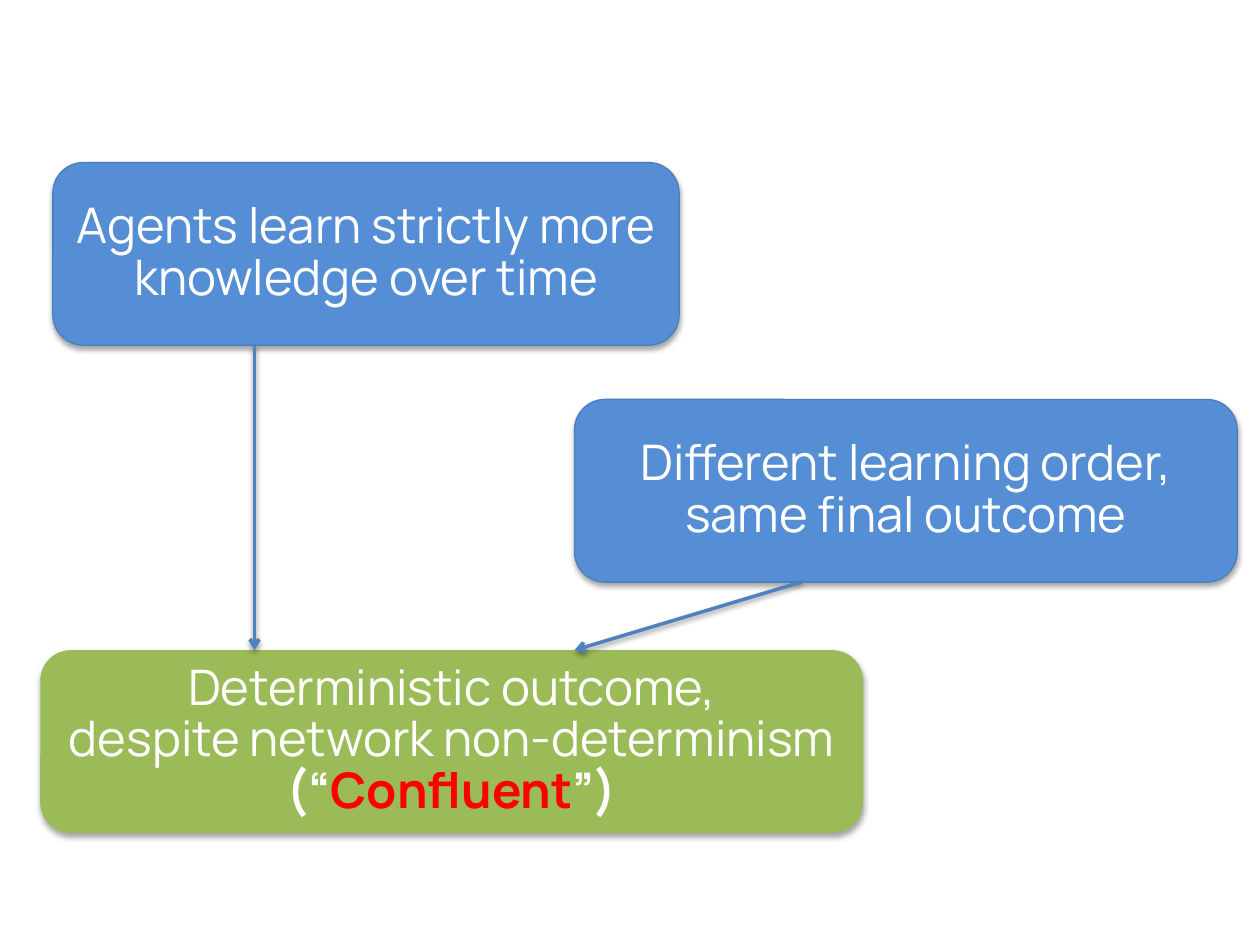
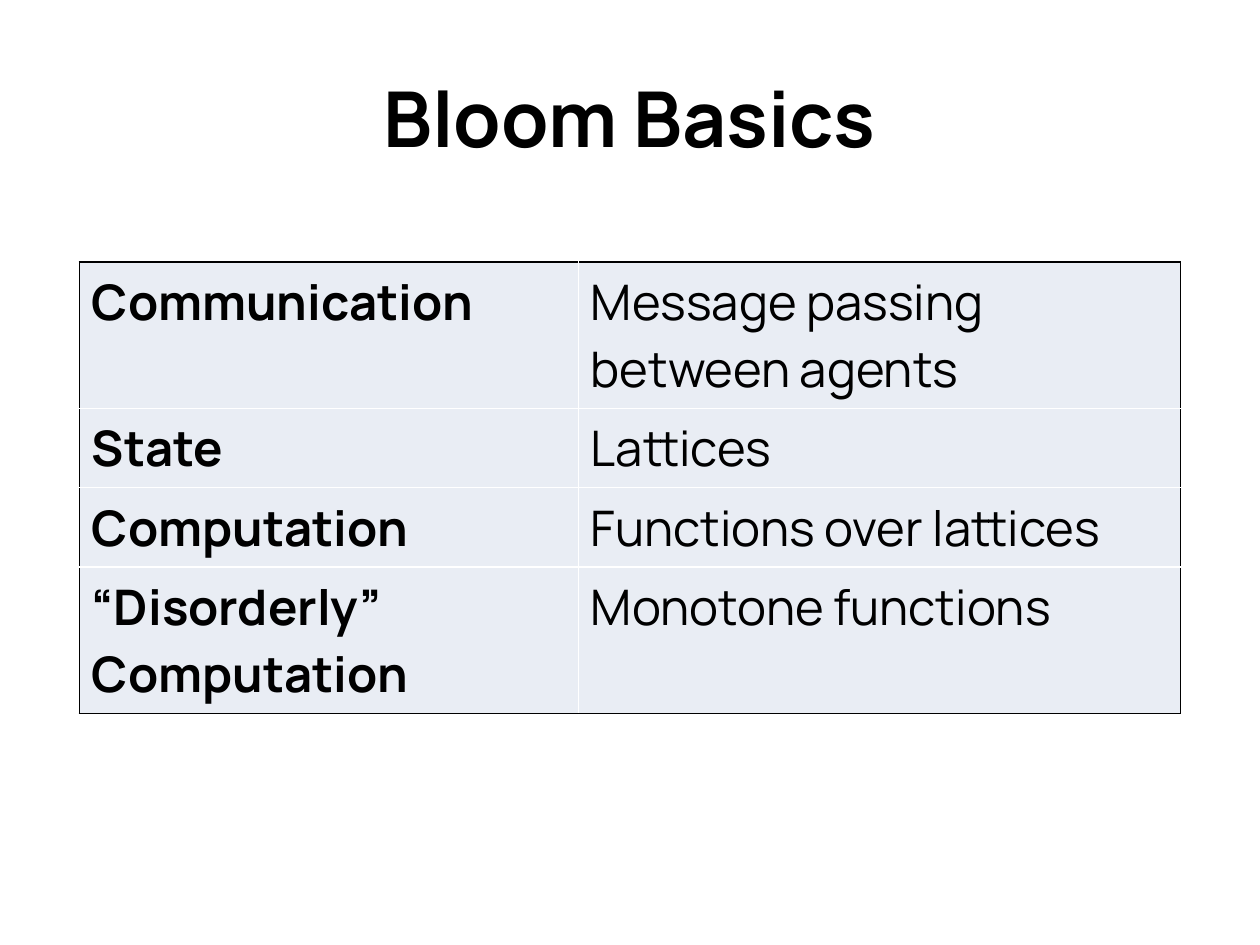
from lxml.etree import SubElement
from pptx import Presentation
from pptx.dml.color import RGBColor
from pptx.enum.shapes import MSO_CONNECTOR, MSO_SHAPE
from pptx.enum.text import MSO_ANCHOR, PP_ALIGN
from pptx.oxml.ns import qn
from pptx.util import Inches, Pt

FONT = "Manrope"
BODY_SIZE = 28
TITLE_SIZE = 44
BLACK = RGBColor(0x00, 0x00, 0x00)
WHITE = RGBColor(0xFF, 0xFF, 0xFF)
RED = RGBColor(0xFF, 0x00, 0x00)
BLUE = RGBColor(0x55, 0x8E, 0xD5)
BLUE_EDGE = RGBColor(0x4B, 0x7E, 0xBC)
GREEN = RGBColor(0x9B, 0xBB, 0x59)
ARROW_BLUE = RGBColor(0x4F, 0x81, 0xBD)
CELL_FILL = RGBColor(0xE9, 0xED, 0xF4)

BLANK_LAYOUT, TITLE_LAYOUT = 6, 5
BOX_HEIGHT = 1.45
CONCLUSION_TOP = 5.16
BASICS = [
    ("Communication", "Message passing\nbetween agents"),
    ("State", "Lattices"),
    ("Computation", "Functions over lattices"),
    ("“Disorderly” Computation", "Monotone functions"),
]


def style_span(span, color, size=BODY_SIZE, bold=False):
    span.font.name = FONT
    span.font.size = Pt(size)
    span.font.bold = bold
    span.font.color.rgb = color


def style_para(para, color, size=BODY_SIZE, bold=False):
    for span in para.runs:
        style_span(span, color, size, bold)


def add_color(parent, color, opacity=100):
    node = SubElement(parent, qn("a:srgbClr"), val=str(color))
    if opacity < 100:
        SubElement(node, qn("a:alpha"), val=str(opacity * 1000))


def add_shadow(shape, opacity, distance):
    """Give the shape a soft shadow falling straight down."""
    properties = shape._element.spPr
    for effects in properties.findall(qn("a:effectLst")):
        properties.remove(effects)
    effects = SubElement(properties, qn("a:effectLst"))
    shadow = SubElement(effects, qn("a:outerShdw"), blurRad=str(Pt(3.1)),
                        dist=str(Pt(distance)), dir="5400000", rotWithShape="0")
    add_color(shadow, BLACK, opacity)


def add_box(page, left, top, width, fill, edge, lines):
    box = page.shapes.add_shape(MSO_SHAPE.ROUNDED_RECTANGLE, Inches(left), Inches(top),
                                Inches(width), Inches(BOX_HEIGHT))
    box.fill.solid()
    box.fill.fore_color.rgb = fill
    if edge is None:
        box.line.fill.background()
    else:
        box.line.color.rgb = edge
        box.line.width = Pt(0.75)
    add_shadow(box, 35, 1.8)
    frame = box.text_frame
    frame.word_wrap = True
    frame.vertical_anchor = MSO_ANCHOR.MIDDLE
    frame.text = "\n".join(lines)
    for para in frame.paragraphs:
        para.alignment = PP_ALIGN.CENTER
        para.line_spacing = 0.88
        style_para(para, WHITE)
    return box


def add_arrow(page, start, end):
    arrow = page.shapes.add_connector(MSO_CONNECTOR.STRAIGHT,
                                      *(Inches(value) for value in start + end))
    arrow.line.color.rgb = ARROW_BLUE
    arrow.line.width = Pt(2)
    SubElement(arrow.line._get_or_add_ln(), qn("a:tailEnd"), type="arrow")
    add_shadow(arrow, 38, 1.6)


def build_confluence_page(deck):
    page = deck.slides.add_slide(deck.slide_layouts[BLANK_LAYOUT])
    knowledge_top, order_top = 1.29, 3.17
    add_box(page, 0.42, knowledge_top, 4.97, BLUE, BLUE_EDGE,
            ["Agents learn strictly more knowledge over time"])
    add_box(page, 4.56, order_top, 5.26, BLUE, BLUE_EDGE,
            ["Different learning order, same final outcome"])
    conclusion = add_box(page, 0.32, CONCLUSION_TOP, 6.53, GREEN, None,
                         ["Deterministic outcome,", "despite network non-determinism", "(“"])
    para = conclusion.text_frame.paragraphs[-1]
    style_para(para, WHITE, bold=True)
    for text, color in (("Confluent", RED), ("”)", WHITE)):
        span = para.add_run()
        span.text = text
        style_span(span, color, bold=True)
    add_arrow(page, (2.02, knowledge_top + BOX_HEIGHT), (2.02, CONCLUSION_TOP))
    add_arrow(page, (6.36, order_top + BOX_HEIGHT), (4.56, CONCLUSION_TOP))


def add_title(page, text):
    title = page.shapes.title
    title.left, title.top = Inches(0.5), Inches(0.3)
    title.width, title.height = Inches(9), Inches(1.25)
    title.text_frame.text = text
    title.text_frame.vertical_anchor = MSO_ANCHOR.MIDDLE
    para = title.text_frame.paragraphs[0]
    para.alignment = PP_ALIGN.CENTER
    style_para(para, BLACK, TITLE_SIZE, bold=True)


def add_borders(cell, outer_sides):
    """Draw black borders on the outer sides and white ones elsewhere."""
    properties = cell._tc.get_or_add_tcPr()
    for side in "LRTB":
        line = SubElement(properties, qn(f"a:ln{side}"), w=str(Pt(1)))
        add_color(SubElement(line, qn("a:solidFill")),
                  BLACK if side in outer_sides else WHITE)


def add_basics_table(page, left, top, column_widths, row_heights):
    table = page.shapes.add_table(len(row_heights), len(column_widths), Inches(left), Inches(top),
                                  Inches(sum(column_widths)), Inches(sum(row_heights))).table
    table.first_row = table.horz_banding = False
    for column, width in zip(table.columns, column_widths):
        column.width = Inches(width)
    last_row = len(BASICS) - 1
    for row_index, texts in enumerate(BASICS):
        table.rows[row_index].height = Inches(row_heights[row_index])
        for column_index, text in enumerate(texts):
            cell = table.cell(row_index, column_index)
            outer_sides = "LR"[column_index]
            outer_sides += {0: "T", last_row: "B"}.get(row_index, "")
            add_borders(cell, outer_sides)
            cell.fill.solid()
            cell.fill.fore_color.rgb = CELL_FILL
            para = cell.text_frame.paragraphs[0]
            para.text = text
            style_para(para, BLACK, bold=column_index == 0)


def build_basics_page(deck):
    page = deck.slides.add_slide(deck.slide_layouts[TITLE_LAYOUT])
    add_title(page, "Bloom Basics")
    add_basics_table(page, 0.63, 2.08, [3.96, 4.78], [0.97, 0.56, 0.5, 0.57])


def main():
    deck = Presentation()
    deck.slide_width, deck.slide_height = Inches(10), Inches(7.5)
    build_confluence_page(deck)
    build_basics_page(deck)
    deck.save("out.pptx")


if __name__ == "__main__":
    main()
